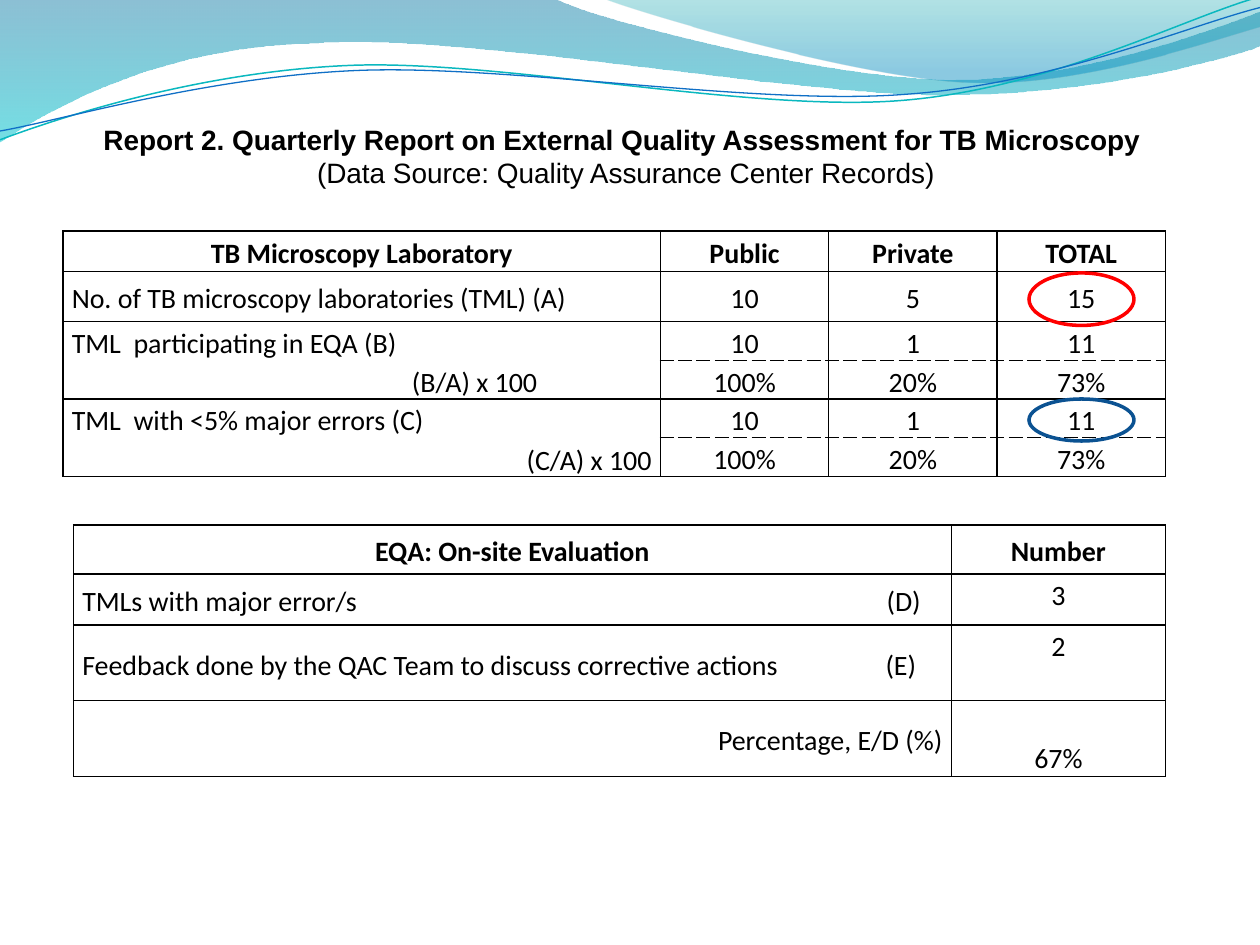
from dataclasses import dataclass
from typing import Optional

from lxml import etree
from pptx import Presentation
from pptx.dml.color import RGBColor
from pptx.enum.shapes import MSO_SHAPE
from pptx.enum.text import MSO_ANCHOR, MSO_AUTO_SIZE, PP_ALIGN
from pptx.oxml.ns import qn
from pptx.util import Emu, Inches, Pt

LEFT, CENTER, RIGHT = PP_ALIGN.LEFT, PP_ALIGN.CENTER, PP_ALIGN.RIGHT
TOP, MIDDLE, BOTTOM = MSO_ANCHOR.TOP, MSO_ANCHOR.MIDDLE, MSO_ANCHOR.BOTTOM
FIT_SHAPE = MSO_AUTO_SIZE.SHAPE_TO_FIT_TEXT
ELLIPSE = MSO_SHAPE.OVAL

BLACK = RGBColor(0x00, 0x00, 0x00)
RED = RGBColor(0xFF, 0x00, 0x00)
NAVY = RGBColor(0x0B, 0x52, 0x92)
TEAL = RGBColor(0x0A, 0xB8, 0xBF)
BLUE = RGBColor(0x0F, 0x6F, 0xC6)
DEEP_SEA = RGBColor(0x00, 0x74, 0xA1)
AQUA = RGBColor(0x00, 0xC6, 0xCF)
LAGOON = RGBColor(0x00, 0xA1, 0xA9)
SKY = RGBColor(0x00, 0x8B, 0xBF)

SLIDE_WIDTH, SLIDE_HEIGHT = Inches(10), Inches(7.5)
GRID_COLUMNS = 120


@dataclass(frozen=True)
class Stop:
    position: float
    color: RGBColor
    opacity: int


@dataclass(frozen=True)
class Wave:
    start: tuple
    segments: tuple
    stops: tuple = ()
    line: Optional[RGBColor] = None
    line_width: float = 0


@dataclass(frozen=True)
class Entry:
    lines: tuple
    aligns: tuple = (CENTER,)
    bold: bool = False
    anchor: MSO_ANCHOR = MIDDLE
    tab: float = 0
    row_span: int = 1
    dash: str = ""


@dataclass(frozen=True)
class Grid:
    left: float
    top: float
    columns: tuple
    rows: tuple
    entries: tuple


@dataclass(frozen=True)
class Ring:
    top: float
    height: float
    color: RGBColor


def cells(count: float) -> Emu:
    return Emu(round(count * SLIDE_WIDTH / GRID_COLUMNS))


def percent(point: tuple) -> tuple:
    return tuple(round(value * SLIDE_WIDTH / 100) for value in point)


def heading(text: str) -> Entry:
    return Entry((text,), bold=True)


def label(text: str, tab: float = 0) -> Entry:
    return Entry((text,), (LEFT,), tab=tab)


def figures(values: tuple, dash: str = "") -> tuple:
    return tuple(Entry((value,), dash=dash) for value in values)


WAVES = (
    Wave((-0.1, -0.1),
         (((44, -0.1),), ((47.6, 1.7), (66.4, 6.3), (75.8, 6.3)),
          ((85.3, 6.3), (95.8, 2.6), (100, 0.9)), ((100.1, 3.6),),
          ((98.3, 4.4), (87, 7.6), (74.6, 7.5)), ((62.2, 7.5), (38.2, 2.8), (25.7, 3.4)),
          ((12.9, 3.6), (4.6, 8.3), (-0.1, 11.3))),
         (Stop(0, DEEP_SEA, 45), Stop(1, AQUA, 55))),
    Wave((47.9, -0.1),
         (((50.9, 1.1), (68.2, 6.2), (76.9, 6.5)), ((85.6, 6.9), (96.1, 3.2), (100, 2.1)),
          ((100, -0.1),)),
         (Stop(0, LAGOON, 30), Stop(0.8, SKY, 45))),
    Wave((0, 11.1),
         (((4.8, 9.3), (15.8, 5.7), (27.7, 5.2)), ((39.5, 4.7), (59.3, 8.9), (71.3, 8)),
          ((83.3, 7.1), (93.8, 1.5), (99.8, -0.2))),
         line=TEAL, line_width=0.85),
    Wave((0, 10.4),
         (((4.7, 9.6), (16.4, 6.1), (28.3, 5.6)), ((40.3, 5.1), (59.7, 8.4), (71.7, 7.5)),
          ((83.6, 6.7), (94.1, 2.1), (100, 0.6))),
         line=BLUE, line_width=0.75),
)

LABORATORIES = Grid(
    6, 22, (56.9, 16.03, 16.03, 16.03), (3.84, 4.8, 3.24, 3.24, 3.24, 3.24),
    (tuple(map(heading, ("TB Microscopy Laboratory", "Public", "Private", "TOTAL"))),
     (label("No. of TB microscopy laboratories (TML) (A)"), *figures(("10", "5", "15"))),
     (Entry(("TML  participating in EQA (B)", "\t(B/A) x 100"), (LEFT, LEFT),
            tab=32.4, row_span=2), *figures(("10", "1", "11"), "B")),
     (None, *figures(("100%", "20%", "73%"), "T")),
     (Entry(("TML  with <5% major errors (C)", "(C/A) x 100"), (LEFT, RIGHT), row_span=2),
      *figures(("10", "1", "11"), "B")),
     (None, *figures(("100%", "20%", "73%"), "T"))))

EVALUATION = Grid(
    7, 50, (83.6, 20.4), (4.68, 4.86, 7.2, 7.2),
    ((heading("EQA: On-site Evaluation"), heading("Number")),
     (label("TMLs with major error/s\t(D)", 76.6), Entry(("3",), anchor=TOP)),
     (label("Feedback done by the QAC Team to discuss corrective actions\t(E)", 76.5),
      Entry(("2",), anchor=TOP)),
     (Entry(("Percentage, E/D (%)",), (RIGHT,)), Entry(("67%",), anchor=BOTTOM))))

RINGS = (Ring(38, 4, NAVY), Ring(26, 5, RED))
TITLE = (("Report 2. Quarterly Report on External Quality Assessment for TB Microscopy", True),
         (" (Data Source: Quality Assurance Center Records)", False))


def add_text(paragraph, text: str, font_name: str, bold: bool) -> None:
    run = paragraph.add_run()
    run.text = text
    run.font.name, run.font.size, run.font.bold = font_name, Pt(16), bold
    run.font.color.rgb = BLACK


def bend_lines(ribbon, segments: tuple) -> None:
    edges = iter(list(ribbon.element.spPr.iter(qn("a:lnTo"))))
    for segment in segments:
        controls = [next(edges) for _ in segment]
        if len(controls) == 3:
            curve = etree.Element(qn("a:cubicBezTo"))
            controls[0].addprevious(curve)
            for control in controls:
                curve.append(control[0])
                control.getparent().remove(control)


def draw_wave(slide, wave: Wave) -> None:
    points = [percent(point) for segment in wave.segments for point in segment]
    builder = slide.shapes.build_freeform(*percent(wave.start))
    builder.add_line_segments(points, close=bool(wave.stops))
    ribbon = builder.convert_to_shape()
    bend_lines(ribbon, wave.segments)
    ribbon.shadow.inherit = False
    if not wave.stops:
        ribbon.fill.background()
        ribbon.line.color.rgb, ribbon.line.width = wave.line, Pt(wave.line_width)
        return
    ribbon.line.fill.background()
    ribbon.fill.gradient()
    ribbon.fill.gradient_angle = 270
    for target, stop in zip(ribbon.fill.gradient_stops, wave.stops):
        target.position, target.color.rgb = stop.position, stop.color
    colors = ribbon.element.spPr.iterfind(".//" + qn("a:gs") + "/" + qn("a:srgbClr"))
    for color, stop in zip(colors, wave.stops):
        etree.SubElement(color, qn("a:alpha"), val=str(stop.opacity * 1000))


def draw_borders(cell, dash: str) -> None:
    properties = cell._tc.get_or_add_tcPr()
    for side in "LRTB":
        border = etree.SubElement(properties, qn("a:ln" + side), w=str(Pt(1)))
        paint = etree.SubElement(border, qn("a:solidFill"))
        etree.SubElement(paint, qn("a:srgbClr"), val=str(BLACK))
        etree.SubElement(border, qn("a:prstDash"), val="dash" if side == dash else "solid")


def fill_cell(cell, entry: Optional[Entry]) -> None:
    draw_borders(cell, entry.dash if entry else "")
    cell.fill.background()
    cell.margin_left = cell.margin_right = Inches(0.07)
    cell.margin_top = cell.margin_bottom = 0
    if entry is None:
        return
    cell.vertical_anchor = entry.anchor
    frame = cell.text_frame
    for index, (text, align) in enumerate(zip(entry.lines, entry.aligns)):
        paragraph = frame.add_paragraph() if index else frame.paragraphs[0]
        paragraph.alignment, paragraph.line_spacing = align, 1.15
        if "\t" in text:
            tabs = etree.SubElement(paragraph._p.get_or_add_pPr(), qn("a:tabLst"))
            etree.SubElement(tabs, qn("a:tab"), pos=str(cells(entry.tab)), algn="l")
        add_text(paragraph, text, "Calibri", entry.bold)


def draw_grid(slide, grid: Grid) -> None:
    table = slide.shapes.add_table(
        len(grid.rows), len(grid.columns), cells(grid.left), cells(grid.top),
        cells(sum(grid.columns)), cells(sum(grid.rows))).table
    table.first_row = table.horz_banding = False
    for column, width in zip(table.columns, grid.columns):
        column.width = cells(width)
    for r, (height, entries) in enumerate(zip(grid.rows, grid.entries)):
        table.rows[r].height = cells(height)
        for c, entry in enumerate(entries):
            fill_cell(table.cell(r, c), entry)
            if entry and entry.row_span > 1:
                table.cell(r, c).merge(table.cell(r + entry.row_span - 1, c))


def draw_ring(slide, ring: Ring) -> None:
    oval = slide.shapes.add_shape(ELLIPSE, cells(98), cells(ring.top), cells(10),
                                  cells(ring.height))
    oval.shadow.inherit = False
    oval.fill.background()
    oval.line.color.rgb, oval.line.width = ring.color, Pt(2)


def write_title(title) -> None:
    title.left, title.top, title.width, title.height = map(cells, (8, 11, 102.5, 7.7))
    frame = title.text_frame
    frame.word_wrap, frame.auto_size, frame.vertical_anchor = False, FIT_SHAPE, MIDDLE
    for index, (text, bold) in enumerate(TITLE):
        paragraph = frame.add_paragraph() if index else frame.paragraphs[0]
        paragraph.alignment = CENTER
        add_text(paragraph, text, "Arial", bold)


def main() -> None:
    deck = Presentation()
    deck.slide_width, deck.slide_height = SLIDE_WIDTH, SLIDE_HEIGHT
    slide = deck.slides.add_slide(deck.slide_layouts.get_by_name("Title Only"))
    write_title(slide.shapes.title)
    for draw, parts in ((draw_wave, WAVES), (draw_grid, (LABORATORIES, EVALUATION)),
                        (draw_ring, RINGS)):
        for part in parts:
            draw(slide, part)
    deck.save("out.pptx")


if __name__ == "__main__":
    main()
